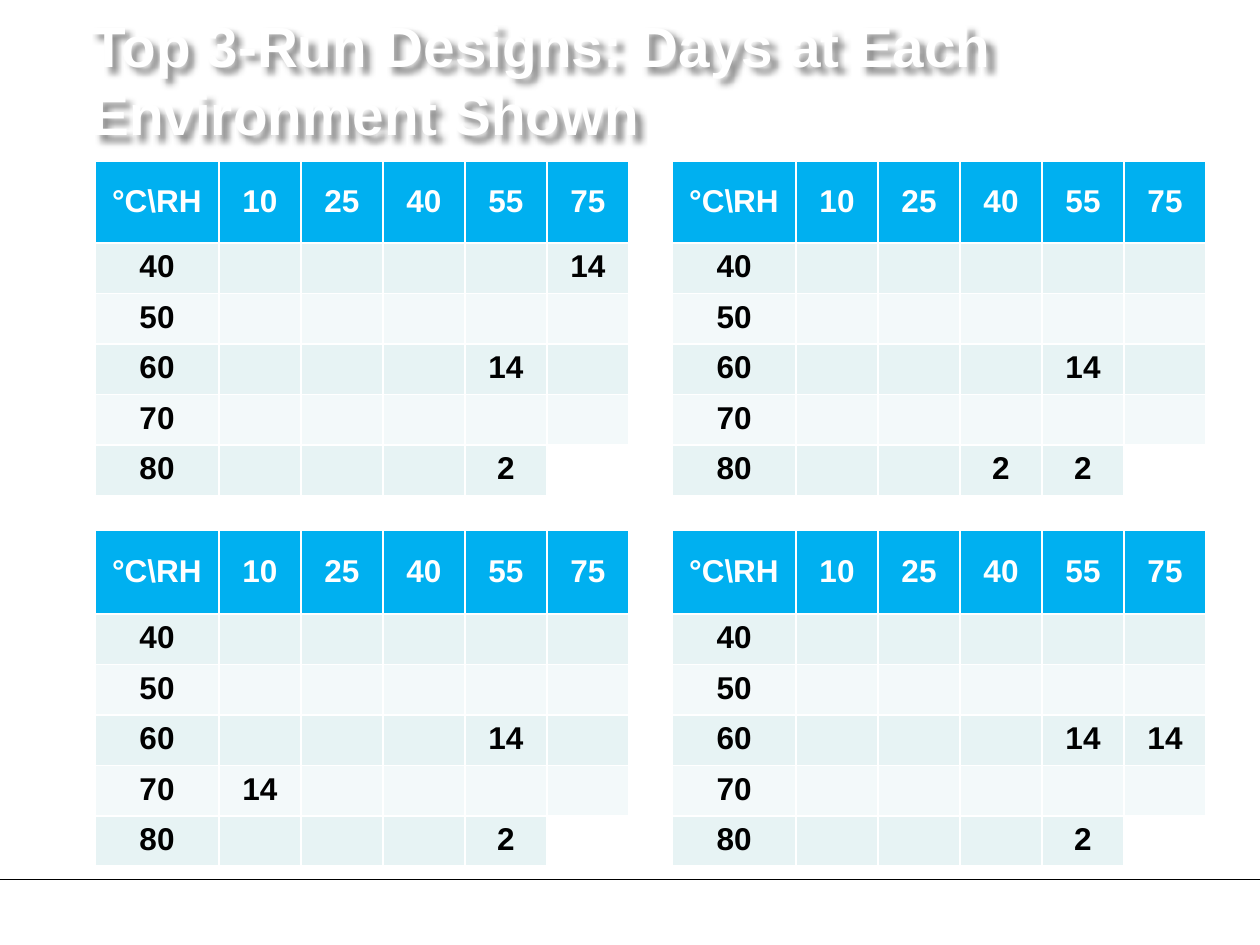
from lxml import etree
from pptx import Presentation
from pptx import util as u
from pptx.dml.color import RGBColor
from pptx.enum import shapes, text
from pptx.oxml import parse_xml
from pptx.oxml.ns import nsdecls, qn

SCALE = u.Inches(1) / 126  # EMU per px

WHITE = RGBColor(0xFF, 0xFF, 0xFF)
BLACK = RGBColor(0x00, 0x00, 0x00)
HEADER_BLUE = RGBColor(0x00, 0xB0, 0xF0)
BANDS = (RGBColor(0xE7, 0xF3, 0xF4), RGBColor(0xF3, 0xF9, 0xFA))

HUMIDITIES = (10, 25, 40, 55, 75)
TEMPERATURES = (40, 50, 60, 70, 80)
EXCLUDED = (80, 75)  # this environment is not available

LEFT_X, RIGHT_X = 95, 672
# top, header height, row height
UPPER = (161, 82, 47)
LOWER = (530, 84, 48)
# left, vertical layout, {(temperature, humidity): days}
DESIGNS = (
    (LEFT_X, UPPER, {(40, 75): 14, (60, 55): 14, (80, 55): 2}),
    (RIGHT_X, UPPER, {(60, 55): 14, (80, 40): 2, (80, 55): 2}),
    (LEFT_X, LOWER, {(60, 55): 14, (70, 10): 14, (80, 55): 2}),
    (RIGHT_X, LOWER, {(60, 55): 14, (60, 75): 14, (80, 55): 2}),
)


def px(n):
    return u.Emu(round(n * SCALE))


class SlideBuilder:
    font = "Arial"
    title_size = u.Pt(32.4)
    cell_size = u.Pt(18)
    label_width, value_width = 124, 82

    def __init__(self, slide):
        self.slide = slide

    def add_run(self, p, words, size, color):
        r = p.add_run()
        r.text = str(words)
        r.font.name = self.font
        r.font.size = size
        r.font.bold = True
        r.font.color.rgb = color

    def title(self, words, x, y, w, h):
        """Add a white heading that stands out by its soft shadow."""
        sp = self.slide.shapes.add_textbox(px(x), px(y), px(w), px(h))
        tf = sp.text_frame
        tf.word_wrap = True
        tf.vertical_anchor = text.MSO_ANCHOR.MIDDLE
        self.add_run(tf.paragraphs[0], words, self.title_size, WHITE)
        sp._element.spPr.append(parse_xml(
            f'<a:effectLst {nsdecls("a")}>'
            '<a:outerShdw blurRad="38100" dist="50800" dir="2700000" algn="tl">'
            '<a:srgbClr val="000000"><a:alpha val="43000"/></a:srgbClr>'
            '</a:outerShdw></a:effectLst>'))

    def rule(self, x1, y1, x2, y2):
        line = self.slide.shapes.add_connector(
            shapes.MSO_CONNECTOR.STRAIGHT, px(x1), px(y1), px(x2), px(y2))
        line.line.color.rgb = BLACK
        line.line.width = u.Pt(0.5)
        etree.SubElement(line._element.spPr, qn("a:effectLst"))

    def cell(self, cell, words, fill, color):
        cell.fill.solid()
        cell.fill.fore_color.rgb = fill
        p = cell.text_frame.paragraphs[0]
        p.alignment = text.PP_ALIGN.CENTER
        if words != "":
            self.add_run(p, words, self.cell_size, color)

    def design_table(self, x, layout, days):
        """Add a temperature by humidity grid of days."""
        y, header_height, row_height = layout
        widths = [self.label_width] + [self.value_width] * len(HUMIDITIES)
        heights = [header_height] + [row_height] * len(TEMPERATURES)
        table = self.slide.shapes.add_table(
            len(heights), len(widths), px(x), px(y),
            px(sum(widths)), px(sum(heights))).table
        table.horz_banding = False
        for column, width in zip(table.columns, widths):
            column.width = px(width)
        for row, height in zip(table.rows, heights):
            row.height = px(height)

        for j, label in enumerate(("°C\\RH", *HUMIDITIES)):
            header = table.cell(0, j)
            self.cell(header, label, HEADER_BLUE, WHITE)
            header.vertical_anchor = text.MSO_ANCHOR.MIDDLE
        for i, temperature in enumerate(TEMPERATURES, 1):
            band = BANDS[(i - 1) % 2]
            self.cell(table.cell(i, 0), temperature, band, BLACK)
            for j, humidity in enumerate(HUMIDITIES, 1):
                place = (temperature, humidity)
                fill = WHITE if place == EXCLUDED else band
                self.cell(table.cell(i, j), days.get(place, ""), fill, BLACK)


def main():
    prs = Presentation()
    prs.slide_width, prs.slide_height = px(1260), px(945)
    s = SlideBuilder(prs.slides.add_slide(prs.slide_layouts[6]))
    s.rule(0, 879, 1260, 879)
    s.title("Top 3-Run Designs: Days at Each Environment Shown", 79, 0, 1134, 158)
    for x, layout, days in DESIGNS:
        s.design_table(x, layout, days)
    prs.save("out.pptx")


if __name__ == "__main__":
    main()
